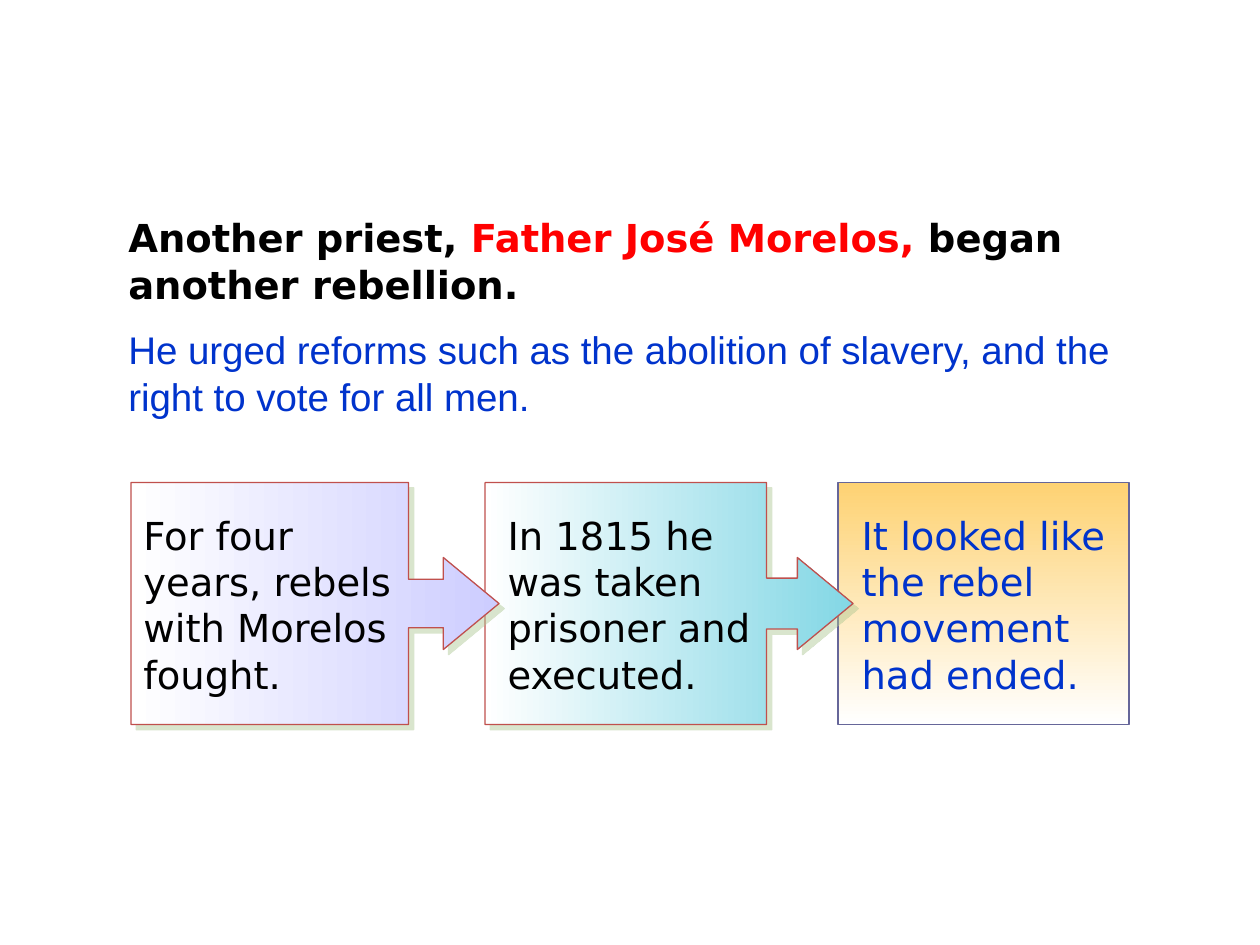
from dataclasses import dataclass

from lxml.etree import SubElement
from pptx import Presentation
from pptx.dml.color import RGBColor
from pptx.enum.shapes import MSO_SHAPE as Preset
from pptx.enum.text import MSO_AUTO_SIZE as AutoSize
from pptx.oxml.ns import qn
from pptx.util import Inches, Pt

COLORS = {
    "black": "000000",
    "red": "FF0000",
    "blue": "0033CC",
    "white": "FFFFFF",
    "lavender": "CDCDFF",
    "aqua": "83D7E5",
    "amber": "FED273",
    "callout_line": "C0504D",
    "outcome_line": "666699",
    "shadow": "ADC793",
}
BODY_FONT = "DejaVu Sans"
PANEL_TOP = 3.83
PANEL_HEIGHT = 1.92
PANEL_TEXT_TOP = 4.01


@dataclass
class Panel:
    text: str
    left: float
    width: float
    text_left: float
    text_width: float
    gradient: tuple[str, str]
    angle: int
    line: str
    text_color: str = "black"
    arrow: tuple[float, ...] = ()


@dataclass
class Run:
    text: str
    color: str = "black"
    font: str = BODY_FONT
    bold: bool = False


PANELS = [
    Panel("For four years, rebels with Morelos fought.", 1.04, 2.92, 1.04, 2.22,
          ("white", "lavender"), 0, "callout_line", arrow=(0.2, 0.19, 0.23, 0.754)),
    Panel("In 1815 he was taken prisoner and executed.", 3.85, 2.92, 3.93, 2.16,
          ("white", "aqua"), 0, "callout_line", arrow=(0.21, 0.19, 0.23, 0.765)),
    Panel("It looked like the rebel movement had ended.", 6.65, 2.31, 6.74, 2.41,
          ("amber", "white"), 270, "outcome_line", text_color="blue"),
]
INTRODUCTION = [
    [
        Run("Another priest, ", bold=True),
        Run("Father José Morelos,", color="red", bold=True),
        Run(" began another rebellion.", bold=True),
    ],
    [Run("He urged reforms such as the abolition of slavery, and the right to vote for all men.",
         color="blue", font="Arial")],
]


def rgb(name: str) -> RGBColor:
    return RGBColor.from_string(COLORS[name])


def add_text(slide, paragraphs: list[list[Run]], *, left: float, top: float,
             width: float, height: float, size: float = 22,
             line_spacing: float = 26.5, gap: float = 11) -> None:
    text_frame = slide.shapes.add_textbox(
        Inches(left), Inches(top), Inches(width), Inches(height)).text_frame
    text_frame.word_wrap = True
    text_frame.auto_size = AutoSize.SHAPE_TO_FIT_TEXT
    for index, runs in enumerate(paragraphs):
        paragraph = text_frame.add_paragraph() if index else text_frame.paragraphs[0]
        paragraph.line_spacing = Pt(line_spacing)
        paragraph.space_before = Pt(gap if index else 0)
        for item in runs:
            run = paragraph.add_run()
            run.text = item.text
            run.font.name = item.font
            run.font.size = Pt(size)
            run.font.bold = item.bold
            run.font.color.rgb = rgb(item.color)


def add_shadow(shape) -> None:
    effects = shape._element.spPr.find(qn("a:effectLst"))
    shadow = SubElement(effects, qn("a:outerShdw"), dist=str(Pt(4.2)),
                        dir=str(45 * 60000), algn="ctr", rotWithShape="0")
    color = SubElement(shadow, qn("a:srgbClr"), val=COLORS["shadow"])
    SubElement(color, qn("a:alpha"), val="46000")


def add_panel(slide, panel: Panel) -> None:
    preset = Preset.RIGHT_ARROW_CALLOUT if panel.arrow else Preset.RECTANGLE
    shape = slide.shapes.add_shape(
        preset, Inches(panel.left), Inches(PANEL_TOP),
        Inches(panel.width), Inches(PANEL_HEIGHT))
    shape.shadow.inherit = False
    for index, value in enumerate(panel.arrow):
        shape.adjustments[index] = value
    shape.fill.gradient()
    shape.fill.gradient_angle = panel.angle
    for stop, color in zip(shape.fill.gradient_stops, panel.gradient):
        stop.color.rgb = rgb(color)
    shape.line.color.rgb = rgb(panel.line)
    shape.line.width = Pt(0.75)
    if panel.arrow:
        add_shadow(shape)
    add_text(slide, [[Run(panel.text, color=panel.text_color)]],
             left=panel.text_left, top=PANEL_TEXT_TOP,
             width=panel.text_width, height=1.57)


def main() -> None:
    presentation = Presentation()
    presentation.slide_width = Inches(10)
    presentation.slide_height = Inches(7.5)
    slide = presentation.slides.add_slide(presentation.slide_layouts[6])
    for panel in reversed(PANELS):
        add_panel(slide, panel)
    add_text(slide, INTRODUCTION, left=0.92, top=1.65, width=8.42, height=1.77)
    presentation.save("out.pptx")


if __name__ == "__main__":
    main()
